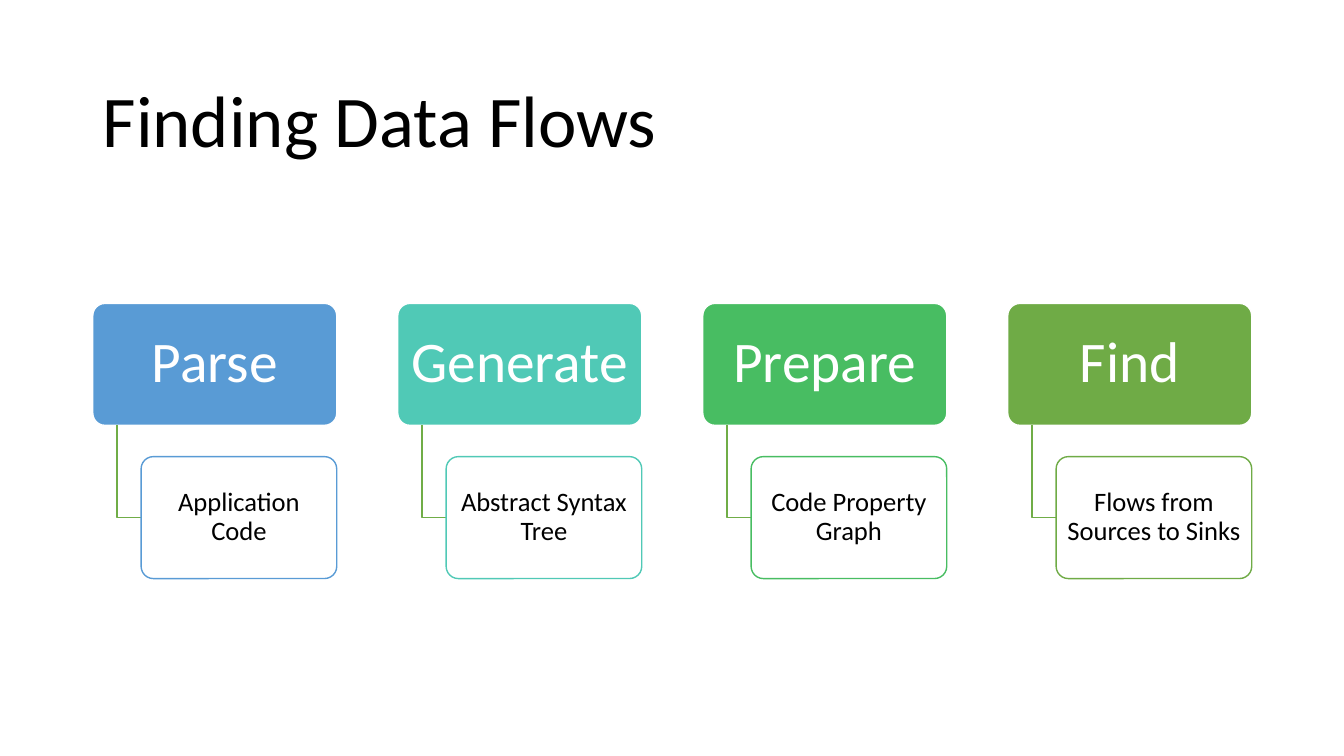
import pptx
import pptx.dml.color
import pptx.enum.shapes
import pptx.enum.text
import pptx.oxml.ns
import pptx.util
from lxml import etree

Inches = pptx.util.Inches
Pt = pptx.util.Pt
RGBColor = pptx.dml.color.RGBColor
ALIGN = pptx.enum.text.PP_ALIGN
ROUNDED = pptx.enum.shapes.MSO_SHAPE.ROUNDED_RECTANGLE

WHITE = RGBColor(0xFF, 0xFF, 0xFF)
BLACK = RGBColor(0x00, 0x00, 0x00)
BLUE = RGBColor(0x59, 0x9B, 0xD5)
TEAL = RGBColor(0x50, 0xC9, 0xB6)
GREEN = RGBColor(0x48, 0xBD, 0x62)
OLIVE = RGBColor(0x6F, 0xAB, 0x46)
ELBOW_GREEN = RGBColor(0x70, 0xAD, 0x47)

# Content: step, its result, colour
TITLE = "Finding Data Flows"
STEPS = [
    ("Parse", "Application Code", BLUE),
    ("Generate", "Abstract Syntax Tree", TEAL),
    ("Prepare", "Code Property Graph", GREEN),
    ("Find", "Flows from Sources to Sinks", OLIVE),
]

# Layout in inches
LEFT, STEP_TOP, PITCH = 0.92, 3.01, 3.025
STEP_WIDTH, RESULT_WIDTH, BOX_HEIGHT = 2.42, 1.94, 1.21
ELBOW_INDENT, RESULT_INDENT = 0.24, 0.48
STEP_BOTTOM = STEP_TOP + BOX_HEIGHT
RESULT_TOP = 4.53
RESULT_MIDDLE = RESULT_TOP + BOX_HEIGHT / 2


def write(shape, text, *, size, color, align, inset_x, inset_y):
    frame = shape.text_frame
    frame.word_wrap = True
    frame.vertical_anchor = pptx.enum.text.MSO_ANCHOR.MIDDLE
    frame.margin_left = frame.margin_right = Inches(inset_x)
    frame.margin_top = frame.margin_bottom = Inches(inset_y)
    paragraph = frame.paragraphs[0]
    paragraph.alignment = align
    paragraph.line_spacing = 0.9
    run = paragraph.add_run()
    run.text = text
    run.font.name = "Calibri"
    run.font.size = Pt(size)
    run.font.color.rgb = color


def add_box(slide, left, top, width, fill, line, opacity=100):
    box = slide.shapes.add_shape(
        ROUNDED, Inches(left), Inches(top), Inches(width), Inches(BOX_HEIGHT))
    box.adjustments[0] = 0.1
    box.shadow.inherit = False
    box.fill.solid()
    box.fill.fore_color.rgb = fill
    box.line.color.rgb = line
    box.line.width = Pt(1)
    if opacity < 100:
        qn = pptx.oxml.ns.qn
        fill_color = box.fill._xPr.find(qn("a:solidFill")).find(qn("a:srgbClr"))
        etree.SubElement(fill_color, qn("a:alpha"), val=str(opacity * 1000))
    return box


def add_elbow(slide, left, right):
    builder = slide.shapes.build_freeform(Inches(left), Inches(STEP_BOTTOM))
    builder.add_line_segments(
        [(Inches(left), Inches(RESULT_MIDDLE)),
         (Inches(right), Inches(RESULT_MIDDLE))], close=False)
    elbow = builder.convert_to_shape()
    elbow.shadow.inherit = False
    elbow.fill.background()
    elbow.line.color.rgb = ELBOW_GREEN
    elbow.line.width = Pt(1)


def main():
    deck = pptx.Presentation()
    deck.slide_width, deck.slide_height = Inches(13.33), Inches(7.5)
    slide = deck.slides.add_slide(deck.slide_layouts[6])

    # Title
    heading = slide.shapes.add_textbox(
        Inches(LEFT), Inches(0.61), Inches(11.5), Inches(1.24))
    write(heading, TITLE, size=52, color=BLACK, align=ALIGN.LEFT,
          inset_x=0.1, inset_y=0.05)

    # Steps, each with its result hanging below
    for index, (step, result, color) in enumerate(STEPS):
        left = LEFT + index * PITCH
        result_left = left + RESULT_INDENT
        step_box = add_box(slide, left, STEP_TOP, STEP_WIDTH, color, WHITE)
        write(step_box, step, size=41, color=WHITE, align=ALIGN.CENTER,
              inset_x=0.09, inset_y=0.06)
        add_elbow(slide, left + ELBOW_INDENT, result_left)
        result_box = add_box(slide, result_left, RESULT_TOP, RESULT_WIDTH,
                             WHITE, color, opacity=89)
        write(result_box, result, size=19, color=BLACK, align=ALIGN.CENTER,
              inset_x=0.04, inset_y=0.03)

    deck.save("out.pptx")


if __name__ == "__main__":
    main()
